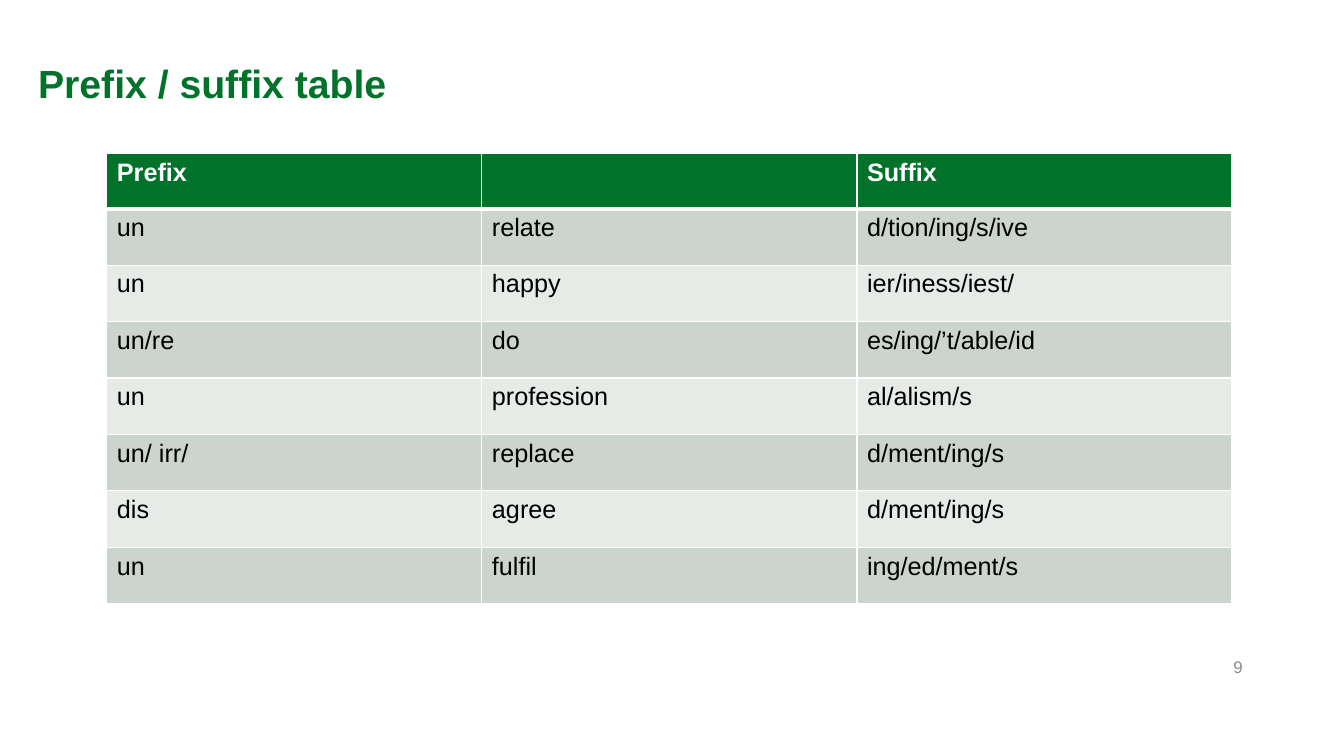
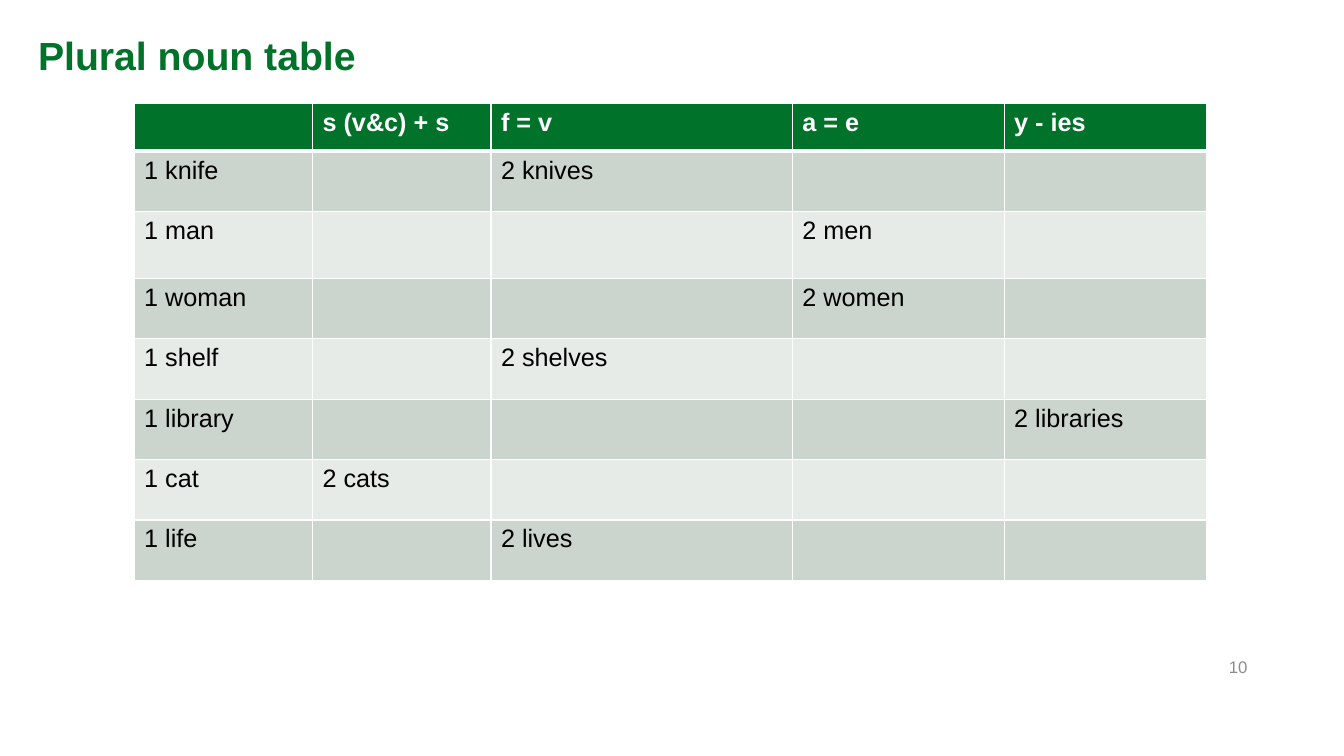
from lxml import etree
from pptx import Presentation
from pptx.dml.color import RGBColor
from pptx.enum.text import MSO_ANCHOR, PP_ALIGN
from pptx.oxml.ns import qn
from pptx.util import Inches, Pt


def color(value):
    """Turn a hex string into a colour."""
    return RGBColor.from_string(value)


def write(frame, text, size=18, ink="000000", bold=False, align=PP_ALIGN.LEFT):
    """Write one formatted paragraph into a text frame."""
    paragraph = frame.paragraphs[0]
    paragraph.alignment = align
    run = paragraph.add_run()
    run.text = text
    run.font.name = "Arial"
    run.font.size = Pt(size)
    run.font.bold = bold
    run.font.color.rgb = color(ink)


class Deck:
    """Holds the house style and the slide being built."""

    GREEN = "007229"
    WHITE = "FFFFFF"
    GRAY = "8C8C8C"
    BANDS = ("CCD5CD", "E7EBE8")

    def __init__(self):
        """Open an empty widescreen presentation."""
        self.presentation = Presentation()
        self.presentation.slide_width = Inches(13.33)
        self.presentation.slide_height = Inches(7.5)
        self.slide = None

    def start(self, title, title_top, number):
        """Add a slide with its title and page number."""
        self.slide = self.presentation.slides.add_slide(self.presentation.slide_layouts[6])
        self.label(title, 0.28, title_top, 4.1, 0.47, size=28, ink=self.GREEN, bold=True)
        self.label(str(number), 11.98, 6.42, 0.6, 0.4, size=12, ink=self.GRAY,
                   align=PP_ALIGN.CENTER)

    def label(self, text, left, top, width, height, **style):
        """Add a vertically centred text box."""
        box = self.slide.shapes.add_textbox(
            Inches(left), Inches(top), Inches(width), Inches(height))
        frame = box.text_frame
        frame.word_wrap = True
        frame.vertical_anchor = MSO_ANCHOR.MIDDLE
        write(frame, text, **style)

    def borders(self, cell, top, bottom):
        """Draw white borders, with the given top and bottom widths."""
        properties = cell._tc.get_or_add_tcPr()
        sides = (("lnL", 1), ("lnR", 1), ("lnT", top), ("lnB", bottom))
        for place, (side, width) in enumerate(sides):
            line = etree.Element(qn(f"a:{side}"), w=str(Pt(width)))
            fill = etree.SubElement(line, qn("a:solidFill"))
            etree.SubElement(fill, qn("a:srgbClr"), val=self.WHITE)
            properties.insert(place, line)

    def table(self, left, top, widths, heights, rows):
        """Add a banded table with a green heading row."""
        grid = self.slide.shapes.add_table(
            len(rows), len(widths), Inches(left), Inches(top),
            Inches(sum(widths)), Inches(sum(heights))).table
        for column, width in zip(grid.columns, widths):
            column.width = Inches(width)
        for index, (words, height) in enumerate(zip(rows, heights)):
            heading = index == 0
            grid.rows[index].height = Inches(height)
            for cell, word in zip(grid.rows[index].cells, words):
                cell.fill.solid()
                cell.fill.fore_color.rgb = color(
                    self.GREEN if heading else self.BANDS[(index - 1) % 2])
                self.borders(cell, 3 if index == 1 else 1, 3 if heading else 1)
                if word:
                    write(cell.text_frame, word, bold=heading,
                          ink=self.WHITE if heading else "000000")


def main():
    """Build the two word tables and save them."""
    deck = Deck()

    deck.start("Prefix / suffix table", 0.59, 9)
    affixes = [
        ("Prefix", "", "Suffix"),
        ("un", "relate", "d/tion/ing/s/ive"),
        ("un", "happy", "ier/iness/iest/"),
        ("un/re", "do", "es/ing/’t/able/id"),
        ("un", "profession", "al/alism/s"),
        ("un/ irr/", "replace", "d/ment/ing/s"),
        ("dis", "agree", "d/ment/ing/s"),
        ("un", "fulfil", "ing/ed/ment/s"),
    ]
    deck.table(1.06, 1.52, [3.72] * 3, [0.55] + [0.56] * 7, affixes)

    deck.start("Plural noun table", 0.31, 10)
    endings = ["s (v&c) + s", "f = v", "a = e", "y - ies"]
    plurals = [
        ("1 knife", "f = v", "2 knives"),
        ("1 man", "a = e", "2 men"),
        ("1 woman", "a = e", "2 women"),
        ("1 shelf", "f = v", "2 shelves"),
        ("1 library", "y - ies", "2 libraries"),
        ("1 cat", "s (v&c) + s", "2 cats"),
        ("1 life", "f = v", "2 lives"),
    ]
    nouns = [[""] + endings]
    for singular, ending, plural in plurals:
        nouns.append([singular] + [plural if ending == rule else "" for rule in endings])
    deck.table(1.33, 1.03, [1.77, 1.77, 2.99, 2.1, 2.01],
               [0.47, 0.6, 0.66] + [0.6] * 5, nouns)

    deck.presentation.save("out.pptx")


if __name__ == "__main__":
    main()
